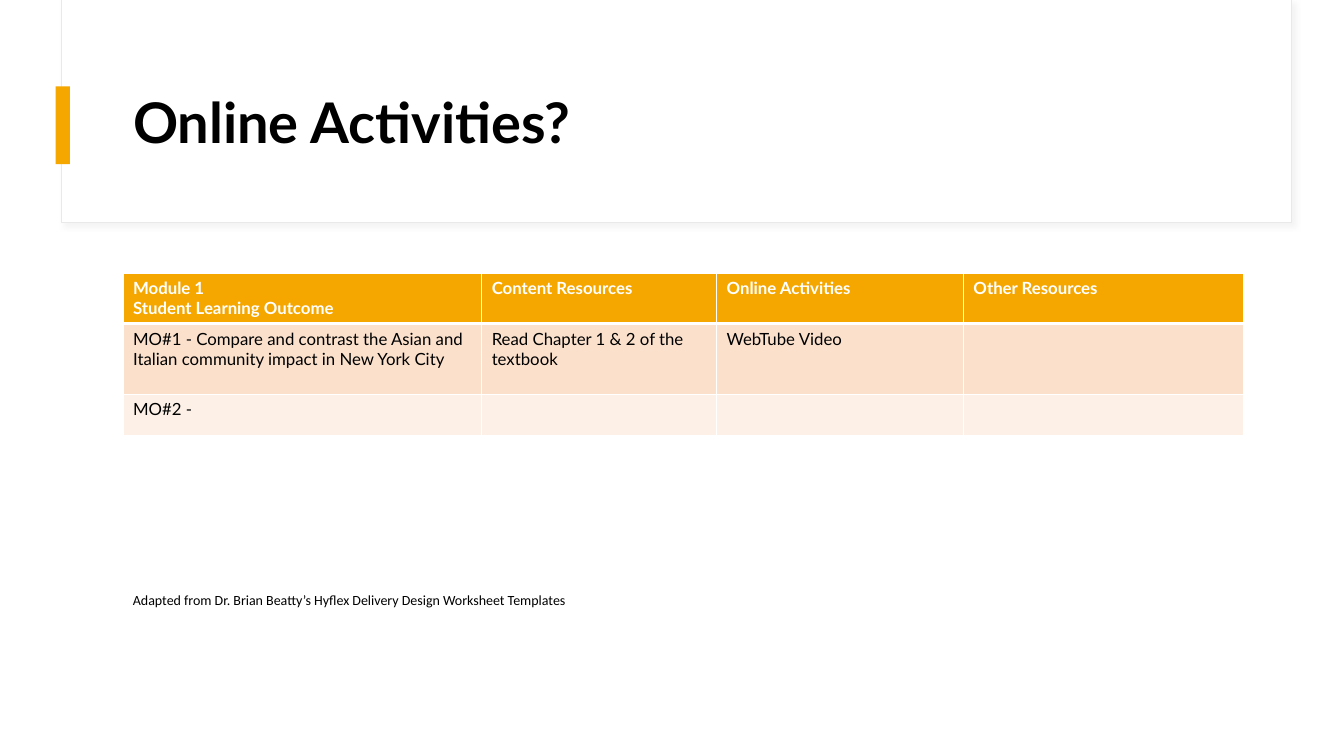
from dataclasses import dataclass

import lxml.etree
import pptx
import pptx.dml.color
import pptx.enum.shapes
import pptx.enum.text
import pptx.oxml.ns
import pptx.util

Cm, Pt = pptx.util.Cm, pptx.util.Pt
qn = pptx.oxml.ns.qn


@dataclass(frozen=True)
class Theme:
    accent: str = "F5A700"
    row_dark: str = "FBE1CC"
    row_light: str = "FDF1E7"
    white: str = "FFFFFF"
    black: str = "000000"
    frame: str = "E9E9E9"
    shadow: str = "D9D9D9"
    font: str = "Lato"
    note_font: str = "Calibri"
    title_size: int = 40
    table_size: int = 12
    note_size: int = 10


T = Theme()
LEFT, WIDTH = 3.1, 28.24
COLUMNS = (9.04, 5.92, 6.22, 7.06)
ROW_HEIGHTS = (1.24, 1.78, 1.04)
ROWS = (
    ("Module 1\nStudent Learning Outcome", "Content Resources",
     "Online Activities", "Other Resources"),
    ("MO#1 - Compare and contrast the Asian and Italian community impact "
     "in New York City", "Read Chapter 1 & 2 of the textbook",
     "WebTube Video", ""),
    ("MO#2 -", "", "", ""),
)


def rgb(color):
    return pptx.dml.color.RGBColor.from_string(color)


def write(tf, text, size=T.table_size, font=T.font, color=T.black, bold=False):
    """Put one paragraph per line of text into the frame."""
    tf.word_wrap = True
    for i, line in enumerate(text.split("\n")):
        p = tf.paragraphs[0] if i == 0 else tf.add_paragraph()
        r = p.add_run()
        r.text = line
        r.font.size, r.font.name, r.font.bold = Pt(size), font, bold
        r.font.color.rgb = rgb(color)


def add_box(s, x, y, w, h, fill, line=None):
    sp = s.shapes.add_shape(pptx.enum.shapes.MSO_SHAPE.RECTANGLE,
                            Cm(x), Cm(y), Cm(w), Cm(h))
    sp.shadow.inherit = False
    sp.fill.solid()
    sp.fill.fore_color.rgb = rgb(fill)
    if line:
        sp.line.color.rgb = rgb(line)
        sp.line.width = Pt(0.75)
    else:
        sp.line.fill.background()
    return sp


def add_shadow(sp, color, alpha, blur, distance, angle):
    effects = sp._element.spPr.find(qn("a:effectLst"))
    shadow = lxml.etree.SubElement(
        effects, qn("a:outerShdw"), blurRad=str(Pt(blur)),
        dist=str(Pt(distance)), dir=str(angle * 60000))
    clr = lxml.etree.SubElement(shadow, qn("a:srgbClr"), val=color)
    lxml.etree.SubElement(clr, qn("a:alpha"), val=str(alpha * 1000))


def add_header(s, x, y, w, h):
    frame = add_box(s, x, y, w, h, T.white, T.frame)
    add_shadow(frame, T.shadow, alpha=30, blur=4, distance=3, angle=45)
    add_box(s, x - 0.15, y + 2.18, 0.36, 1.96, T.accent)

    title = s.shapes.title
    title.left, title.top = Cm(LEFT), Cm(y + 1.52)
    title.width, title.height = Cm(WIDTH), Cm(3.28)
    tf = title.text_frame
    tf.vertical_anchor = pptx.enum.text.MSO_ANCHOR.MIDDLE
    write(tf, "Online Activities?", size=T.title_size, bold=True)
    tf.paragraphs[0].alignment = pptx.enum.text.PP_ALIGN.LEFT
    tf.paragraphs[0].line_spacing = 0.9
    s.shapes._spTree.append(title._element)  # in front of the frame


def set_borders(cell, widths):
    tc_pr = cell._tc.get_or_add_tcPr()
    for i, (side, width) in enumerate(widths.items()):
        ln = lxml.etree.Element(qn(f"a:ln{side}"), w=str(Pt(width)))
        fill = lxml.etree.SubElement(ln, qn("a:solidFill"))
        lxml.etree.SubElement(fill, qn("a:srgbClr"), val=T.white)
        tc_pr.insert(i, ln)


def add_activity_table(s, x, y):
    tbl = s.shapes.add_table(len(ROWS), len(COLUMNS), Cm(x), Cm(y),
                             Cm(sum(COLUMNS)), Cm(sum(ROW_HEIGHTS))).table
    for column, width in zip(tbl.columns, COLUMNS):
        column.width = Cm(width)
    fills = (T.accent, T.row_dark, T.row_light)
    for i, (texts, height, fill) in enumerate(zip(ROWS, ROW_HEIGHTS, fills)):
        tbl.rows[i].height = Cm(height)
        header = i == 0
        for j, text in enumerate(texts):
            cell = tbl.cell(i, j)
            cell.fill.solid()
            cell.fill.fore_color.rgb = rgb(fill)
            set_borders(cell, {"L": 1, "R": 1, "T": 3 if i == 1 else 1,
                               "B": 3 if header else 1})
            if text:
                write(cell.text_frame, text, bold=header,
                      color=T.white if header else T.black)


def add_credit(s, x, y, w, h):
    tb = s.shapes.add_textbox(Cm(x), Cm(y), Cm(w), Cm(h))
    write(tb.text_frame,
          "Adapted from Dr. Brian Beatty’s Hyflex Delivery Design Worksheet Templates",
          size=T.note_size, font=T.note_font)


def main():
    prs = pptx.Presentation()
    prs.slide_width, prs.slide_height = Cm(33.87), Cm(19.05)
    s = prs.slides.add_slide(prs.slide_layouts[5])
    add_header(s, 1.55, 0, 31.01, 5.61)
    add_activity_table(s, LEFT, 6.88)
    add_credit(s, LEFT, 14.78, 21.29, 1.45)
    prs.save("out.pptx")


if __name__ == "__main__":
    main()
